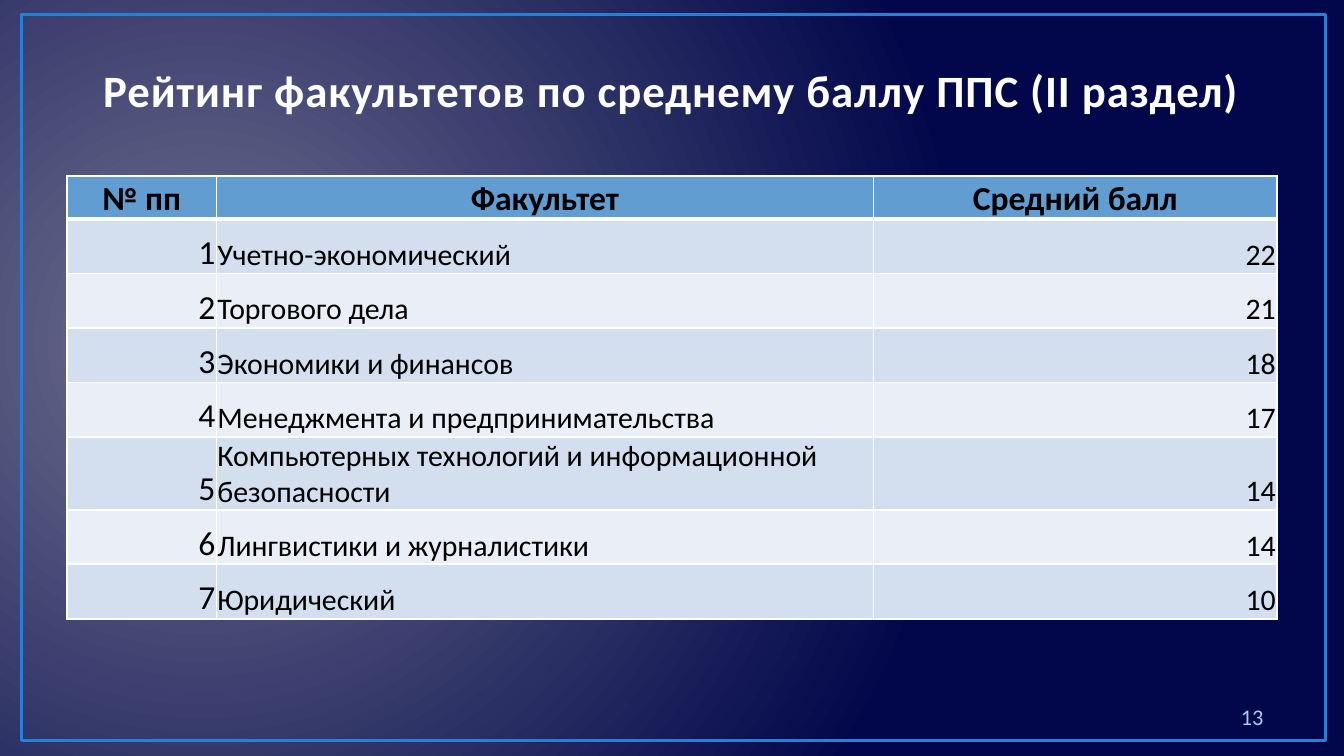
from dataclasses import dataclass

from pptx import Presentation
from pptx.dml.color import RGBColor
from pptx.enum.shapes import MSO_SHAPE
from pptx.enum.text import MSO_ANCHOR, PP_ALIGN
from pptx.oxml import parse_xml
from pptx.oxml.ns import nsdecls
from pptx.util import Cm, Pt

RECTANGLE = MSO_SHAPE.RECTANGLE
LEFT, CENTER, RIGHT = PP_ALIGN.LEFT, PP_ALIGN.CENTER, PP_ALIGN.RIGHT
MIDDLE, BOTTOM = MSO_ANCHOR.MIDDLE, MSO_ANCHOR.BOTTOM


@dataclass(frozen=True)
class Theme:
    font: str = "Calibri"
    glow: str = "6E708E"
    night: str = "01074A"
    frame: str = "297FD5"
    title: str = "FEFEFE"
    title_outline: str = "234F77"
    header: str = "629DD1"
    bands: tuple = ("D3DFEE", "EAEFF7")
    border: str = "FFFFFF"
    text: str = "000000"
    page_number: str = "ACCBF9"
    title_size: int = 24
    large_size: int = 18
    body_size: int = 16
    small_size: int = 12


THEME = Theme()


def write(text_frame, text, size, color, alignment, bold=False):
    paragraph = text_frame.paragraphs[0]
    paragraph.alignment = alignment
    run = paragraph.add_run()
    run.text = text
    run.font.name = THEME.font
    run.font.size = Pt(size)
    run.font.bold = bold
    run.font.color.rgb = RGBColor.from_string(color)
    return run


def line_xml(tag, color, width):
    """Return a solid line element; width is in points."""
    return parse_xml(
        f'<a:{tag} {nsdecls("a")} w="{Pt(width)}"><a:solidFill>'
        f'<a:srgbClr val="{color}"/></a:solidFill></a:{tag}>'
    )


presentation = Presentation()
presentation.slide_width = Cm(25.4)
presentation.slide_height = Cm(14.29)
slide = presentation.slides.add_slide(presentation.slide_layouts[6])

# Background: glow on the left fading into dark blue
background = parse_xml(
    f'<p:bg {nsdecls("p", "a")}><p:bgPr><a:gradFill rotWithShape="1"><a:gsLst>'
    f'<a:gs pos="0"><a:srgbClr val="{THEME.glow}"/></a:gs>'
    f'<a:gs pos="100000"><a:srgbClr val="{THEME.night}"/></a:gs></a:gsLst>'
    '<a:path path="circle"><a:fillToRect l="15000" t="50000" r="85000" b="60000"/>'
    '</a:path></a:gradFill><a:effectLst/></p:bgPr></p:bg>'
)
slide.element.cSld.insert(0, background)

# Frame
frame = slide.shapes.add_shape(RECTANGLE, Cm(0.41), Cm(0.28), Cm(24.64), Cm(13.72))
frame.shadow.inherit = False
frame.fill.background()
frame.line.color.rgb = RGBColor.from_string(THEME.frame)
frame.line.width = Pt(1.5)

# Title
title = slide.shapes.add_textbox(Cm(1.27), Cm(1.14), Cm(22.83), Cm(1.19))
title.text_frame.word_wrap = True
title.text_frame.vertical_anchor = BOTTOM
title_run = write(title.text_frame, "Рейтинг факультетов по среднему баллу ППС (II раздел)",
                  THEME.title_size, THEME.title, CENTER, bold=True)
title_properties = title_run.font._element
title_properties.set("spc", "50")
title_properties.insert(0, line_xml("ln", THEME.title_outline, 1.05))

# Ranking table
headings = ("№ пп", "Факультет", "Средний балл")
ranking = (
    ("Учетно-экономический", 22),
    ("Торгового дела", 21),
    ("Экономики и финансов", 18),
    ("Менеджмента и предпринимательства", 17),
    ("Компьютерных технологий и информационной безопасности", 14),
    ("Лингвистики и журналистики", 14),
    ("Юридический", 10),
)
rows = [headings] + [
    (str(place), faculty, str(score))
    for place, (faculty, score) in enumerate(ranking, start=1)
]
column_widths = (2.82, 12.42, 7.62)
column_alignments = (RIGHT, LEFT, RIGHT)
column_sizes = (THEME.large_size, THEME.body_size, THEME.body_size)
header_height, row_height = 0.81, 1.03

table = slide.shapes.add_table(
    len(rows), len(headings), Cm(1.27), Cm(3.33),
    Cm(sum(column_widths)), Cm(header_height + row_height * len(ranking)),
).table
for column, width in zip(table.columns, column_widths):
    column.width = Cm(width)

for row_index, values in enumerate(rows):
    is_header = row_index == 0
    table.rows[row_index].height = Cm(header_height if is_header else row_height)
    fill = THEME.header if is_header else THEME.bands[(row_index - 1) % 2]
    border_widths = {
        "lnL": 1,
        "lnR": 1,
        "lnT": 3 if row_index == 1 else 1,
        "lnB": 3 if is_header else 1,
    }
    for column_index, value in enumerate(values):
        cell = table.cell(row_index, column_index)
        cell.vertical_anchor = BOTTOM
        cell.margin_left = cell.margin_right = cell.margin_top = Cm(0.02)
        cell.margin_bottom = 0
        cell.fill.solid()
        cell.fill.fore_color.rgb = RGBColor.from_string(fill)
        cell_properties = cell._tc.get_or_add_tcPr()
        for position, (side, width) in enumerate(border_widths.items()):
            cell_properties.insert(position, line_xml(side, THEME.border, width))
        size = THEME.large_size if is_header else column_sizes[column_index]
        alignment = CENTER if is_header else column_alignments[column_index]
        write(cell.text_frame, value, size, THEME.text, alignment, bold=is_header)

# Page number
page_number = slide.shapes.add_textbox(Cm(18.21), Cm(13.16), Cm(5.92), Cm(0.76))
page_number.text_frame.word_wrap = True
page_number.text_frame.vertical_anchor = MIDDLE
write(page_number.text_frame, "13", THEME.small_size, THEME.page_number, RIGHT)

presentation.save("out.pptx")
